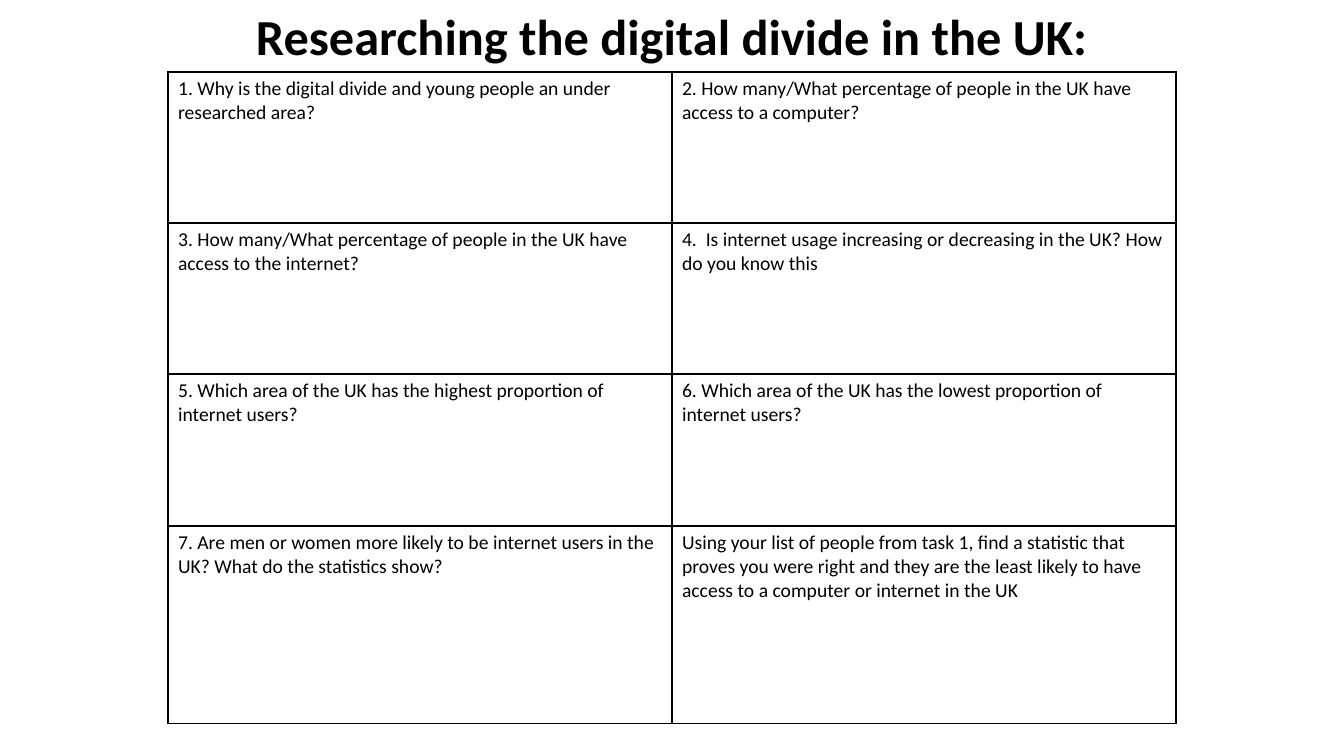
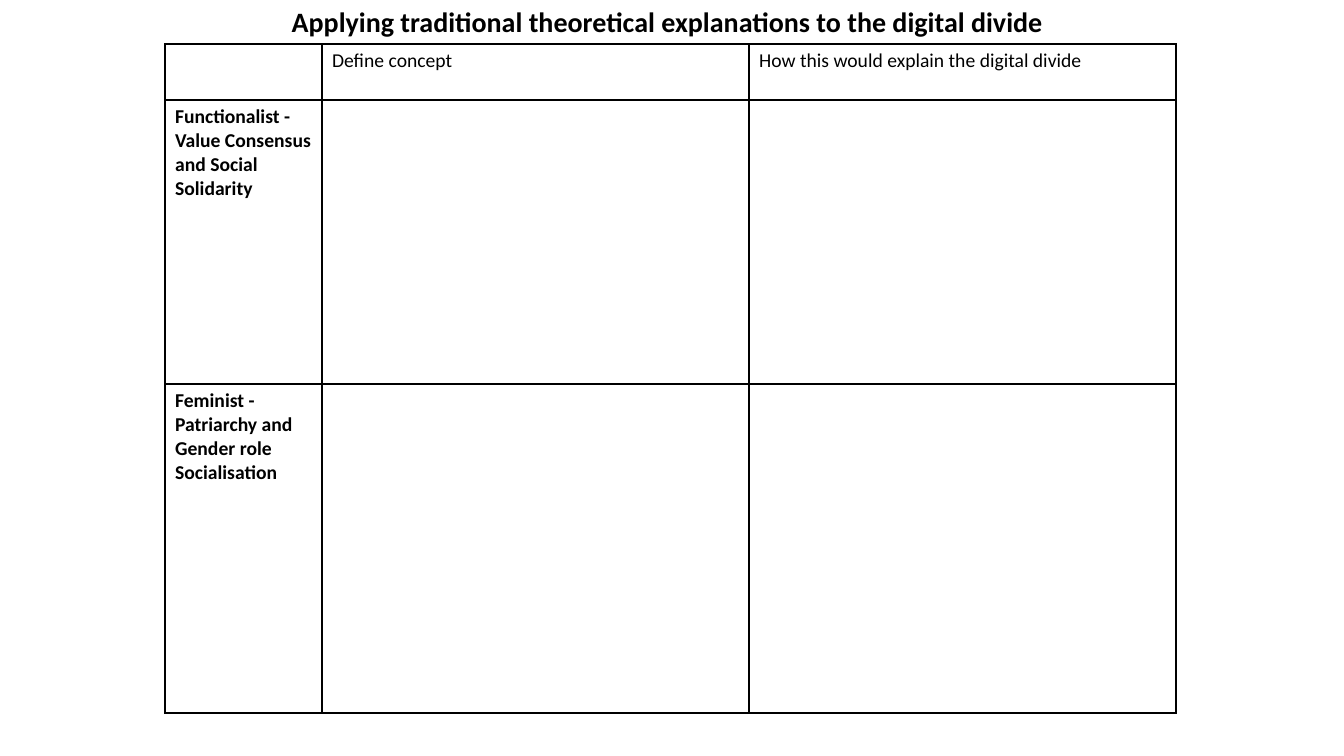
from lxml.etree import SubElement
from pptx import Presentation
from pptx.dml.color import RGBColor
from pptx.enum.text import PP_ALIGN
from pptx.oxml.ns import qn
from pptx.util import Pt

# Shared style
PX = 914400 / 100.8
COLORS = {"text": "000000", "border": "000000"}
FONT = "Calibri"
CELL_SIZE = 14
BORDER_WIDTH = 1


def px(length):
    return round(length * PX)


def add_run(paragraph, text, size, bold):
    run = paragraph.add_run()
    run.text = text
    run.font.name = FONT
    run.font.size = Pt(size)
    run.font.bold = bold
    run.font.color.rgb = RGBColor.from_string(COLORS["text"])


# Worksheets: one title above one table each
worksheets = [
    {
        "title": "Researching the digital divide in the UK:",
        "title_size": 36,
        "left": 168,
        "title_height": 72,
        "columns": [504, 504],
        "rows": [151, 151, 152, 198],
        "bold_from_row": None,
        "cells": [
            ["1. Why is the digital divide and young people an under researched area?",
             "2. How many/What percentage of people in the UK have access to a computer?"],
            ["3. How many/What percentage of people in the UK have access to the internet?",
             "4.  Is internet usage increasing or decreasing in the UK? How do you know this"],
            ["5. Which area of the UK has the highest proportion of internet users?",
             "6. Which area of the UK has the lowest proportion of internet users?"],
            ["7. Are men or women more likely to be internet users in the UK? "
             "What do the statistics show?",
             "Using your list of people from task 1, find a statistic that proves you were "
             "right and they are the least likely to have access to a computer or internet "
             "in the UK"],
        ],
    },
    {
        "title": "Applying traditional theoretical explanations to the digital divide ",
        "title_size": 20,
        "left": 165,
        "title_height": 44,
        "columns": [157, 427, 427],
        "rows": [56, 284, 329],
        "bold_from_row": 1,
        "cells": [
            ["", "Define concept", "How this would explain the digital divide"],
            ["Functionalist - Value Consensus and Social Solidarity", "", ""],
            ["Feminist - Patriarchy and Gender role Socialisation", "", ""],
        ],
    },
]

presentation = Presentation()
presentation.slide_width = px(1344)
presentation.slide_height = px(756)

for sheet in worksheets:
    slide = presentation.slides.add_slide(presentation.slide_layouts[6])
    left, top = px(sheet["left"]), px(sheet["title_height"])
    width = px(sum(sheet["columns"]))

    # Title
    title = slide.shapes.add_textbox(left, 0, width, top)
    title.text_frame.word_wrap = True
    paragraph = title.text_frame.paragraphs[0]
    paragraph.alignment = PP_ALIGN.CENTER
    add_run(paragraph, sheet["title"], sheet["title_size"], True)

    # Table grid
    table = slide.shapes.add_table(
        len(sheet["rows"]), len(sheet["columns"]),
        left, top, width, px(sum(sheet["rows"])),
    ).table
    table.first_row = False
    table.horz_banding = False
    for column, column_width in zip(table.columns, sheet["columns"]):
        column.width = px(column_width)
    for row, row_height in zip(table.rows, sheet["rows"]):
        row.height = px(row_height)

    # Cell text, borders and fill
    for row_index, texts in enumerate(sheet["cells"]):
        bold = sheet["bold_from_row"] is not None and row_index >= sheet["bold_from_row"]
        for column_index, text in enumerate(texts):
            cell = table.cell(row_index, column_index)
            if text:
                add_run(cell.text_frame.paragraphs[0], text, CELL_SIZE, bold)
            properties = cell._tc.get_or_add_tcPr()
            for edge in ("a:lnL", "a:lnR", "a:lnT", "a:lnB"):
                line = SubElement(properties, qn(edge), w=str(Pt(BORDER_WIDTH)))
                line_fill = SubElement(line, qn("a:solidFill"))
                SubElement(line_fill, qn("a:srgbClr"), val=COLORS["border"])
            cell.fill.background()

presentation.save("out.pptx")
